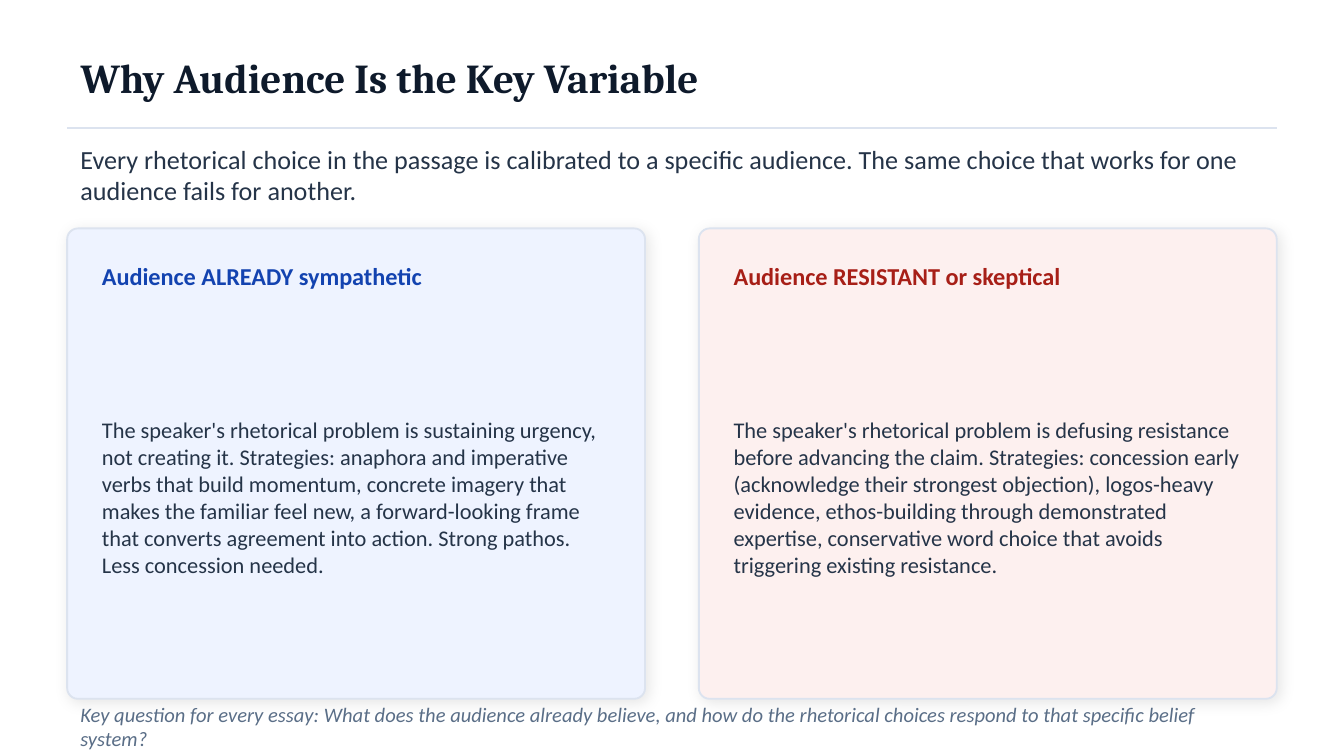
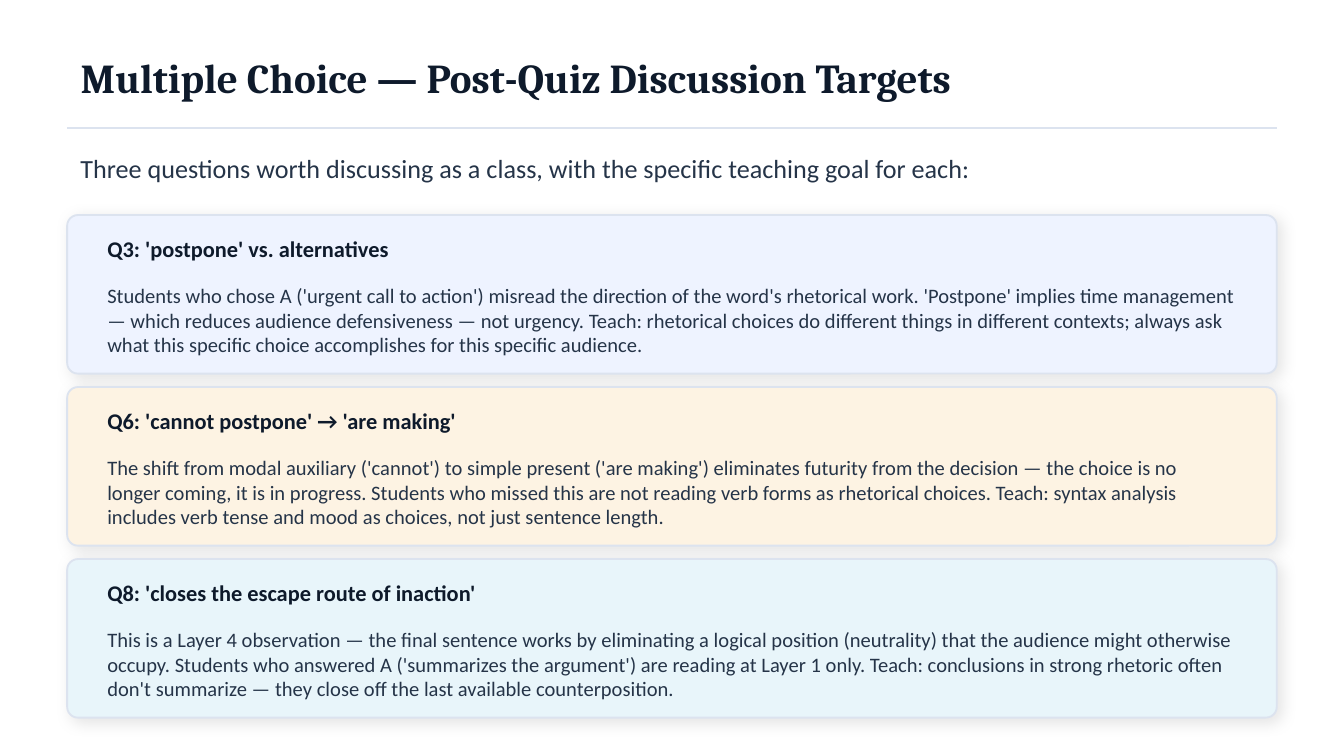
from lxml.etree import SubElement
from pptx import Presentation
from pptx.dml.color import RGBColor
from pptx.enum.shapes import MSO_CONNECTOR, MSO_SHAPE
from pptx.enum.text import MSO_ANCHOR, MSO_AUTO_SIZE, PP_ALIGN
from pptx.oxml.ns import qn
from pptx.util import Inches, Pt

# The grid has 100 columns across; rows are as tall as columns are wide.
WIDTH, HEIGHT = Inches(10), Inches(5.625)
CELL = WIDTH / 100
LEFT, WIDE = 5, 90
ROUND = 0.8

COLORS = {
    "ink": "0E1A2B", "body": "253448", "muted": "5A6E87", "rule": "DCE3EF",
    "blue": "1343B0", "red": "A71F17", "shade": "000000",
    "pale blue": "EEF3FF", "pale red": "FDF0EF",
    "pale gold": "FDF3E3", "pale cyan": "E8F5FA",
}
FONTS = {
    "title": {"name": "Cambria", "size": Pt(22), "bold": True},
    "lead": {"name": "Calibri", "size": Pt(14), "bold": False},
    "head": {"name": "Calibri", "size": Pt(13), "bold": True},
    "text": {"name": "Calibri", "size": Pt(12), "bold": False},
    "topic": {"name": "Calibri", "size": Pt(12), "bold": True},
    "note": {"name": "Calibri", "size": Pt(11), "bold": False},
    "close": {"name": "Calibri", "size": Pt(11), "italic": True},
}
FRAME = {"word_wrap": True, "auto_size": MSO_AUTO_SIZE.NONE,
         "vertical_anchor": MSO_ANCHOR.MIDDLE}

SIDES = [
    ("Audience ALREADY sympathetic", "blue", "pale blue",
     "The speaker's rhetorical problem is sustaining urgency, not creating it. "
     "Strategies: anaphora and imperative verbs that build momentum, concrete "
     "imagery that makes the familiar feel new, a forward-looking frame that "
     "converts agreement into action. Strong pathos. Less concession needed."),
    ("Audience RESISTANT or skeptical", "red", "pale red",
     "The speaker's rhetorical problem is defusing resistance before advancing "
     "the claim. Strategies: concession early (acknowledge their strongest "
     "objection), logos-heavy evidence, ethos-building through demonstrated "
     "expertise, conservative word choice that avoids triggering existing "
     "resistance."),
]
TOPICS = [
    ("Q3: 'postpone' vs. alternatives", "pale blue",
     "Students who chose A ('urgent call to action') misread the direction of "
     "the word's rhetorical work. 'Postpone' implies time management — which "
     "reduces audience defensiveness — not urgency. Teach: rhetorical choices "
     "do different things in different contexts; always ask what this specific "
     "choice accomplishes for this specific audience."),
    ("Q6: 'cannot postpone' → 'are making'", "pale gold",
     "The shift from modal auxiliary ('cannot') to simple present ('are "
     "making') eliminates futurity from the decision — the choice is no longer "
     "coming, it is in progress. Students who missed this are not reading verb "
     "forms as rhetorical choices. Teach: syntax analysis includes verb tense "
     "and mood as choices, not just sentence length."),
    ("Q8: 'closes the escape route of inaction'", "pale cyan",
     "This is a Layer 4 observation — the final sentence works by eliminating "
     "a logical position (neutrality) that the audience might otherwise "
     "occupy. Students who answered A ('summarizes the argument') are reading "
     "at Layer 1 only. Teach: conclusions in strong rhetoric often don't "
     "summarize — they close off the last available counterposition."),
]


def grid(*cells):
    return [round(cell * CELL) for cell in cells]


def color(name):
    return RGBColor.from_string(COLORS[name])


def write(shape, words, font, tint):
    frame = shape.text_frame
    for key, value in FRAME.items():
        setattr(frame, key, value)
    para = frame.paragraphs[0]
    para.alignment = PP_ALIGN.LEFT
    run = para.add_run()
    run.text = words
    for key, value in FONTS[font].items():
        setattr(run.font, key, value)
    run.font.color.rgb = color(tint)


def label(slide, box, words, font, tint="body"):
    write(slide.shapes.add_textbox(*grid(*box)), words, font, tint)


def shade(shape):
    """Give the shape a soft shadow."""
    effects = SubElement(shape.element.spPr, qn("a:effectLst"))
    outer = SubElement(effects, qn("a:outerShdw"), blurRad=str(Pt(8)),
                       dist=str(Pt(2)), dir=str(45 * 60000),
                       algn="bl", rotWithShape="0")
    tone = SubElement(outer, qn("a:srgbClr"), val=COLORS["shade"])
    SubElement(tone, qn("a:alpha"), val="10000")


def panel(slide, box, fill):
    shape = slide.shapes.add_shape(MSO_SHAPE.ROUNDED_RECTANGLE, *grid(*box))
    shape.adjustments[0] = ROUND / min(box[2:])
    shape.fill.solid()
    shape.fill.fore_color.rgb = color(fill)
    shape.line.color.rgb = color("rule")
    shape.line.width = Pt(1)
    shade(shape)


def start(deck, title):
    """Add a slide with its title and the rule below it."""
    slide = deck.slides.add_slide(deck.slide_layouts[5])
    head = slide.shapes.title
    spots = zip(("left", "top", "width", "height"), grid(LEFT, 2.5, WIDE, 6.5))
    for key, value in spots:
        setattr(head, key, value)
    write(head, title, "title", "ink")
    rule = slide.shapes.add_connector(
        MSO_CONNECTOR.STRAIGHT, *grid(LEFT, 9.5, LEFT + WIDE, 9.5))
    rule.line.color.rgb = color("rule")
    rule.line.width = Pt(1.2)
    SubElement(rule.element.spPr, qn("a:effectLst"))
    return slide


def side_card(slide, box, head, tint, fill, words):
    left, top, width, height = box
    inner, span = left + 1.6, width - 3.2
    panel(slide, box, fill)
    label(slide, (inner, top + 1.3, span, 4.5), head, "head", tint)
    label(slide, (inner, top + 6.5, span, height - 8), words, "text")


def topic_card(slide, box, head, fill, words):
    left, top, width, height = box
    inner, span = left + 2, width - 4
    panel(slide, box, fill)
    label(slide, (inner, top + 0.8, span, 3.4), head, "topic", "ink")
    label(slide, (inner, top + 4.4, span, height - 5), words, "note")


def audience(deck):
    slide = start(deck, "Why Audience Is the Key Variable")
    label(slide, (LEFT, 10.5, WIDE, 5),
          "Every rhetorical choice in the passage is calibrated to a specific "
          "audience. The same choice that works for one audience fails for "
          "another.", "lead")
    gap = 4
    width = (WIDE - gap) / 2
    for i, side in enumerate(SIDES):
        box = (LEFT + i * (width + gap), 17, width, 35)
        side_card(slide, box, *side)
    label(slide, (LEFT, 52.8, WIDE, 2.5),
          "Key question for every essay: What does the audience already "
          "believe, and how do the rhetorical choices respond to that specific "
          "belief system?", "close", "muted")


def quiz(deck):
    slide = start(deck, "Multiple Choice — Post-Quiz Discussion Targets")
    label(slide, (LEFT, 10.5, WIDE, 4),
          "Three questions worth discussing as a class, with the specific "
          "teaching goal for each:", "lead")
    height, gap = 11.8, 1
    for i, topic in enumerate(TOPICS):
        box = (LEFT, 16 + i * (height + gap), WIDE, height)
        topic_card(slide, box, *topic)


def main():
    deck = Presentation()
    deck.slide_width, deck.slide_height = WIDTH, HEIGHT
    audience(deck)
    quiz(deck)
    deck.save("out.pptx")


if __name__ == "__main__":
    main()
